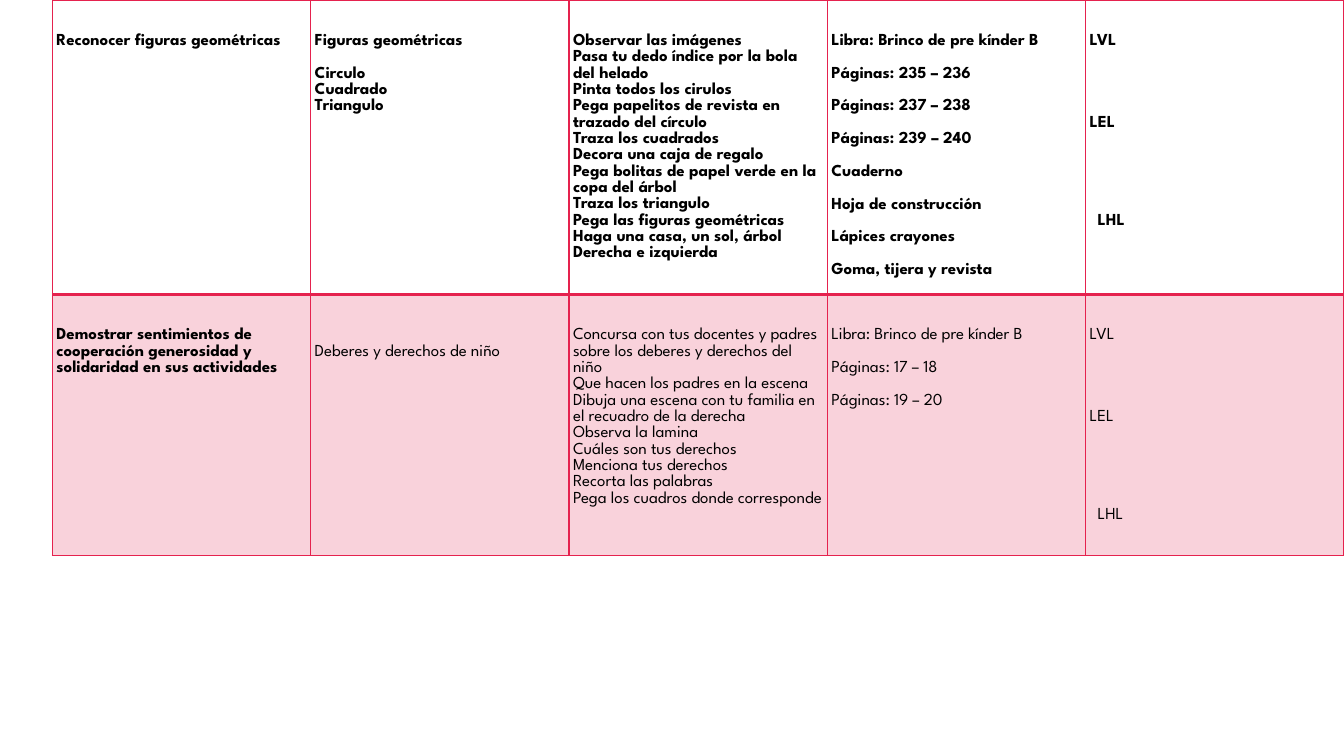
from lxml.etree import SubElement
from pptx import Presentation
from pptx.dml.color import RGBColor as Rgb
from pptx.oxml.ns import qn
from pptx.util import Inches, Pt

COLORS = {"rose": "E5224E", "ink": "000000"}
FONT = "League Spartan"
LINE = 11.7  # height of one text line in points
TOP = 2      # free lines above the text of a cell
WIDTH, HEIGHT = 13.33, 7.5
LEFT = 0.52
TALL = [2.92, 2.59]


def spaced(*texts, gap=1):
    """Pair each text with the free lines before it."""
    return [(gap if i else TOP, text) for i, text in enumerate(texts)]


LEVELS = [(TOP, "LVL"), (4, "LEL"), (5, "LHL")]
BOOK = "Libra: Brinco de pre kínder B"
ROWS = [
    [
        spaced("Reconocer figuras geométricas"),
        [(TOP, "Figuras geométricas"), (1, "Circulo"),
         (0, "Cuadrado"), (0, "Triangulo")],
        spaced("Observar las imágenes",
               "Pasa tu dedo índice por la bola del helado",
               "Pinta todos los cirulos",
               "Pega papelitos de revista en trazado del círculo",
               "Traza los cuadrados",
               "Decora una caja de regalo",
               "Pega bolitas de papel verde en la copa del árbol",
               "Traza los triangulo",
               "Pega las figuras geométricas",
               "Haga una casa, un sol, árbol",
               "Derecha e izquierda", gap=0),
        spaced(BOOK, "Páginas: 235 – 236", "Páginas: 237 – 238",
               "Páginas: 239 – 240", "Cuaderno", "Hoja de construcción",
               "Lápices crayones", "Goma, tijera y revista"),
        LEVELS,
    ],
    [
        spaced("Demostrar sentimientos de cooperación generosidad y "
               "solidaridad en sus actividades"),
        [(TOP + 1, "Deberes y derechos de niño")],
        spaced("Concursa con tus docentes y padres sobre los deberes y "
               "derechos del niño",
               "Que hacen los padres en la escena",
               "Dibuja una escena con tu familia en el recuadro de la derecha",
               "Observa la lamina",
               "Cuáles son tus derechos",
               "Menciona tus derechos",
               "Recorta las palabras",
               "Pega los cuadros donde corresponde", gap=0),
        spaced(BOOK, "Páginas: 17 – 18", "Páginas: 19 – 20"),
        LEVELS,
    ],
]


def set_edges(cell, base):
    """Draw the four borders, the bottom one with its own width."""
    props = cell._tc.get_or_add_tcPr()
    for side, width in (("L", 1), ("R", 1), ("T", 1), ("B", base)):
        edge = SubElement(props, qn(f"a:ln{side}"), w=str(Pt(width)))
        fill = SubElement(edge, qn("a:solidFill"))
        SubElement(fill, qn("a:srgbClr"), val=COLORS["rose"])


def set_tint(cell):
    """Fill the cell with rose at 20 % opacity."""
    cell.fill.solid()
    cell.fill.fore_color.rgb = Rgb.from_string(COLORS["rose"])
    color = cell._tc.tcPr.find(f"{qn('a:solidFill')}/{qn('a:srgbClr')}")
    SubElement(color, qn("a:alpha"), val="20000")


def add_text(cell, items, bold):
    cell.margin_left = cell.margin_right = Inches(0.04)
    cell.margin_top = Pt(items[0][0] * LINE)
    cell.margin_bottom = 0
    frame = cell.text_frame
    for i, (gap, text) in enumerate(items):
        para = frame.add_paragraph() if i else frame.paragraphs[0]
        para.line_spacing = 1.06
        para.space_before = Pt(gap * LINE if i else 0)
        if text == "LHL":
            para._p.get_or_add_pPr().set("marL", str(Inches(0.08)))
        run = para.add_run()
        run.text = text
        font = run.font
        font.name, font.size, font.bold = FONT, Pt(12), bold
        font.color.rgb = Rgb.from_string(COLORS["ink"])


def add_plan(slide):
    count = len(ROWS[0])
    wide = WIDTH - LEFT
    table = slide.shapes.add_table(
        len(ROWS), count, Inches(LEFT), 0,
        Inches(wide), Inches(sum(TALL))).table
    table.first_row = table.horz_banding = False
    for col in table.columns:
        col.width = Inches(wide / count)
    for r, cells in enumerate(ROWS):
        table.rows[r].height = Inches(TALL[r])
        for c, items in enumerate(cells):
            cell = table.cell(r, c)
            add_text(cell, items, bold=r == 0 or c == 0)
            set_edges(cell, base=1 if r else 2)
            if r:
                set_tint(cell)
            else:
                cell.fill.background()


def main():
    deck = Presentation()
    deck.slide_width, deck.slide_height = Inches(WIDTH), Inches(HEIGHT)
    add_plan(deck.slides.add_slide(deck.slide_layouts[6]))
    deck.save("out.pptx")


if __name__ == "__main__":
    main()
